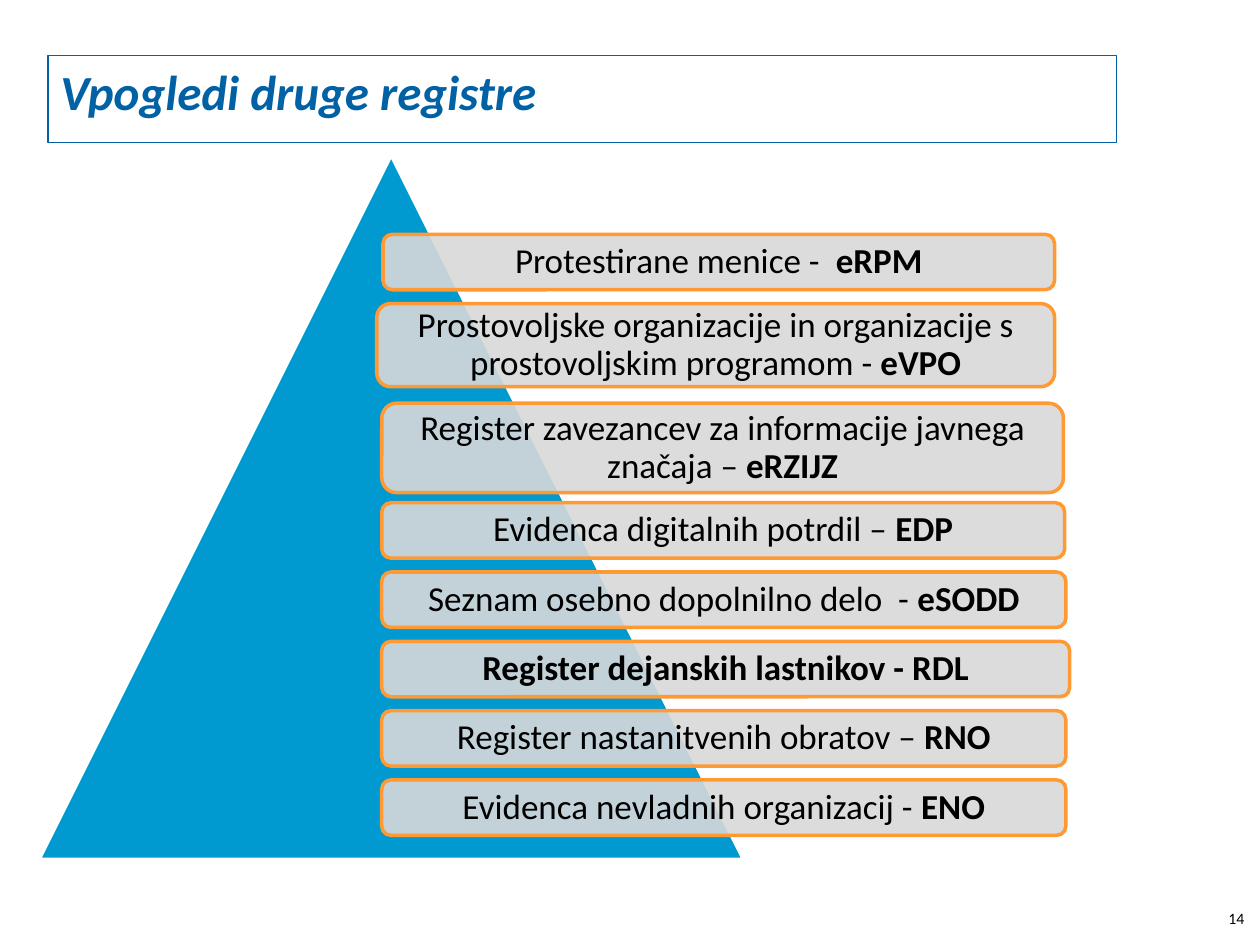
from lxml.etree import SubElement
from pptx import Presentation
from pptx.dml.color import RGBColor
from pptx.enum.shapes import MSO_SHAPE as Shape
from pptx.enum.text import MSO_ANCHOR as Anchor, PP_ALIGN as Align
from pptx.oxml.ns import qn
from pptx.util import Inches, Pt

COLUMNS, ROWS = 100, 75
ROW_HEIGHT, ROW_PITCH = 4.4, 5.5
FIRST_EVEN_TOP = 39.9

# Left, top, width, height in grid units, then the plain and the bold text
TOP_REGISTERS = [
    (30.4, 18.6, 53.3, ROW_HEIGHT, "Protestirane menice -  ", "eRPM"),
    (29.9, 24.1, 53.8, 6.6,
     "Prostovoljske organizacije in organizacije s prostovoljskim programom - ", "eVPO"),
    (30.3, 32, 54.1, 7.1,
     "Register zavezancev za informacije javnega značaja – ", "eRZIJZ"),
]
EVEN_REGISTERS = [
    (54.2, "Evidenca digitalnih potrdil – ", "EDP"),
    (54.3, "Seznam osebno dopolnilno delo  - ", "eSODD"),
    (54.6, "", "Register dejanskih lastnikov - RDL"),
    (54.3, "Register nastanitvenih obratov – ", "RNO"),
    (54.3, "Evidenca nevladnih organizacij - ", "ENO"),
]


def color(value):
    return RGBColor.from_string(value)


def add_text(para, text, size=20, ink="000000", bold=False, italic=False):
    span = para.add_run()
    span.text = text
    font = span.font
    font.name, font.size, font.bold, font.italic = "Calibri", Pt(size), bold, italic
    font.color.rgb = color(ink)


class Page:
    BLUE, SKY, ORANGE, GRAY = "0061A5", "009AD0", "FF9933", "D9D9D9"

    def __init__(self, deck):
        self.slide = deck.slides.add_slide(deck.slide_layouts[6])
        self.column = deck.slide_width / COLUMNS
        self.row = deck.slide_height / ROWS

    def place(self, left, top, width, height):
        """Turn grid units into slide lengths."""
        return (round(left * self.column), round(top * self.row),
                round(width * self.column), round(height * self.row))

    def shape(self, kind, area, line, line_width, fill=None, opacity=100):
        box = self.slide.shapes.add_shape(kind, *self.place(*area))
        box.shadow.inherit = False
        box.line.color.rgb = color(line)
        box.line.width = Pt(line_width)
        if fill is None:
            box.fill.background()
        else:
            box.fill.solid()
            box.fill.fore_color.rgb = color(fill)
        if opacity < 100:
            tint = box.fill._xPr.find(qn("a:solidFill"))[0]
            SubElement(tint, qn("a:alpha"), val=str(opacity * 1000))
        return box

    def title(self, area, text):
        frame = self.shape(Shape.RECTANGLE, area, self.BLUE, 0.75).text_frame
        frame.vertical_anchor = Anchor.TOP
        para = frame.paragraphs[0]
        para.alignment = Align.LEFT
        add_text(para, text, size=28, ink=self.BLUE, bold=True, italic=True)

    def pyramid(self, area):
        self.shape(Shape.ISOSCELES_TRIANGLE, area, "FFFFFF", 2, self.SKY)

    def register(self, area, plain, strong):
        box = self.shape(Shape.ROUNDED_RECTANGLE, area, self.ORANGE, 2, self.GRAY, opacity=90)
        frame = box.text_frame
        frame.word_wrap = True
        frame.vertical_anchor = Anchor.MIDDLE
        para = frame.paragraphs[0]
        para.alignment = Align.CENTER
        para.line_spacing = 0.9
        if plain:
            add_text(para, plain)
        add_text(para, strong, bold=True)

    def number(self, area, text):
        box = self.slide.shapes.add_textbox(*self.place(*area))
        box.text_frame.word_wrap = True
        add_text(box.text_frame.paragraphs[0], text, size=9)


def main():
    deck = Presentation()
    deck.slide_width, deck.slide_height = Inches(10), Inches(7.5)
    page = Page(deck)
    page.title((3.8, 4.4, 84.8, 6.9), "Vpogledi druge registre")
    page.pyramid((3.1, 12.3, 55.9, 55.9))
    for *area, plain, strong in TOP_REGISTERS:
        page.register(area, plain, strong)
    for index, (width, plain, strong) in enumerate(EVEN_REGISTERS):
        top = FIRST_EVEN_TOP + index * ROW_PITCH
        page.register((30.3, top, width, ROW_HEIGHT), plain, strong)
    page.number((96.5, 71.6, 3.5, 3.4), "14")
    deck.save("out.pptx")


if __name__ == "__main__":
    main()
